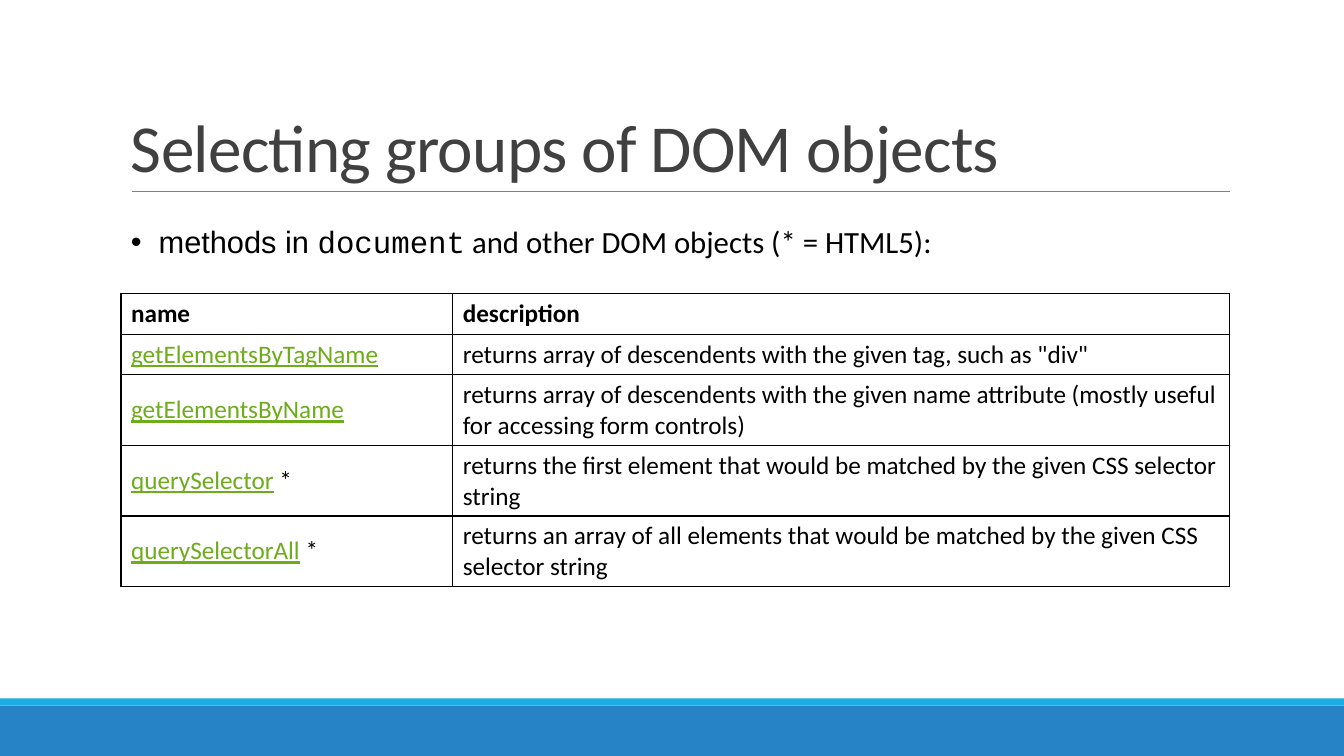
from lxml.etree import SubElement
from pptx import Presentation
from pptx.dml.color import RGBColor
from pptx.enum.shapes import MSO_CONNECTOR, MSO_SHAPE
from pptx.enum.text import MSO_ANCHOR
from pptx.oxml import parse_xml
from pptx.oxml.ns import nsdecls, qn
from pptx.util import Cm, Pt

HUES = {
    "band": "2683C6",
    "strip": "1CADE4",
    "rule": "808080",
    "title": "404040",
    "text": "000000",
    "link": "6EAC1C",
}

# Method name, mark after it, description
ROWS = [
    ("getElementsByTagName", "",
     'returns array of descendents with the given tag, such as "div"'),
    ("getElementsByName", "",
     "returns array of descendents with the given name attribute "
     "(mostly useful for accessing form controls)"),
    ("querySelector", " *",
     "returns the first element that would be matched by the given CSS selector string"),
    ("querySelectorAll", " *",
     "returns an array of all elements that would be matched by the given CSS selector string"),
]


def color(name):
    return RGBColor.from_string(HUES[name])


def write(par, text, size=18, font="Calibri", hue="text", bold=False, under=False):
    run = par.add_run()
    run.text = text
    face = run.font
    face.size, face.name, face.bold, face.underline = Pt(size), font, bold, under
    face.color.rgb = color(hue)
    return run


def add_band(slide, top, high, hue):
    band = slide.shapes.add_shape(
        MSO_SHAPE.RECTANGLE, 0, Cm(top), Cm(33.87), Cm(high))
    band.shadow.inherit = False
    band.fill.solid()
    band.fill.fore_color.rgb = color(hue)
    band.line.fill.background()


def add_rule(slide, left, right, top):
    rule = slide.shapes.add_connector(
        MSO_CONNECTOR.STRAIGHT, Cm(left), Cm(top), Cm(right), Cm(top))
    rule.line.color.rgb = color("rule")
    rule.line.width = Pt(0.5)
    SubElement(rule._element.spPr, qn("a:effectLst"))


def add_box(slide, left, top, wide, high, anchor):
    frame = slide.shapes.add_textbox(
        Cm(left), Cm(top), Cm(wide), Cm(high)).text_frame
    frame.word_wrap = True
    frame.vertical_anchor = anchor
    return frame.paragraphs[0]


def add_bullet(par, indent):
    props = par._p.get_or_add_pPr()
    props.set("marL", str(Cm(indent)))
    props.set("indent", str(-Cm(indent)))
    SubElement(props, qn("a:buFont")).set("typeface", "Arial")
    SubElement(props, qn("a:buChar")).set("char", "•")


def set_cell(cell):
    cell.vertical_anchor = MSO_ANCHOR.MIDDLE
    cell.fill.background()
    props = cell._tc.get_or_add_tcPr()
    # Borders come before the fill
    for i, side in enumerate("LRTB"):
        props.insert(i, parse_xml(
            f'<a:ln{side} {nsdecls("a")} w="{Pt(1)}"><a:solidFill>'
            f'<a:srgbClr val="{HUES["text"]}"/></a:solidFill></a:ln{side}>'))
    return cell.text_frame.paragraphs[0]


def add_grid(slide, left, top, cols, highs):
    table = slide.shapes.add_table(
        len(highs), len(cols), Cm(left), Cm(top),
        Cm(sum(cols)), Cm(sum(highs))).table
    table.first_row = table.horz_banding = False
    for col, wide in zip(table.columns, cols):
        col.width = Cm(wide)
    for row, high in zip(table.rows, highs):
        row.height = Cm(high)
    return [[set_cell(cell) for cell in row.cells] for row in table.rows]


def main():
    deck = Presentation()
    deck.slide_width, deck.slide_height = Cm(33.87), Cm(19.05)
    slide = deck.slides.add_slide(deck.slide_layouts[6])

    # Footer bands and title rule
    add_band(slide, 17.78, 1.27, "band")
    add_band(slide, 17.6, 0.18, "strip")
    add_rule(slide, 3.32, 31, 4.82)

    # Title
    title = add_box(slide, 3.05, 0.79, 27.94, 4.04, MSO_ANCHOR.BOTTOM)
    title.line_spacing = 0.85
    run = write(title, "Selecting groups of DOM objects", size=48, hue="title")
    run.font._element.set("spc", "-50")

    # Lead line
    lead = add_box(slide, 3.05, 5.49, 20.8, 1.19, MSO_ANCHOR.MIDDLE)
    add_bullet(lead, 0.7)
    write(lead, "methods in ", size=22, font="Arial")
    write(lead, "document", size=22, font="Courier New")
    write(lead, " and other DOM objects (* = HTML5):", size=22)

    # Method table
    head, *body = add_grid(
        slide, 3.05, 7.4, [8.36, 19.58], [1.02, 1.02, 1.78, 1.78, 1.78])
    for par, text in zip(head, ("name", "description")):
        write(par, text, bold=True)
    for (left, right), (name, mark, about) in zip(body, ROWS):
        write(left, name, hue="link", under=True)
        if mark:
            write(left, mark)
        write(right, about)

    deck.save("out.pptx")


if __name__ == "__main__":
    main()
